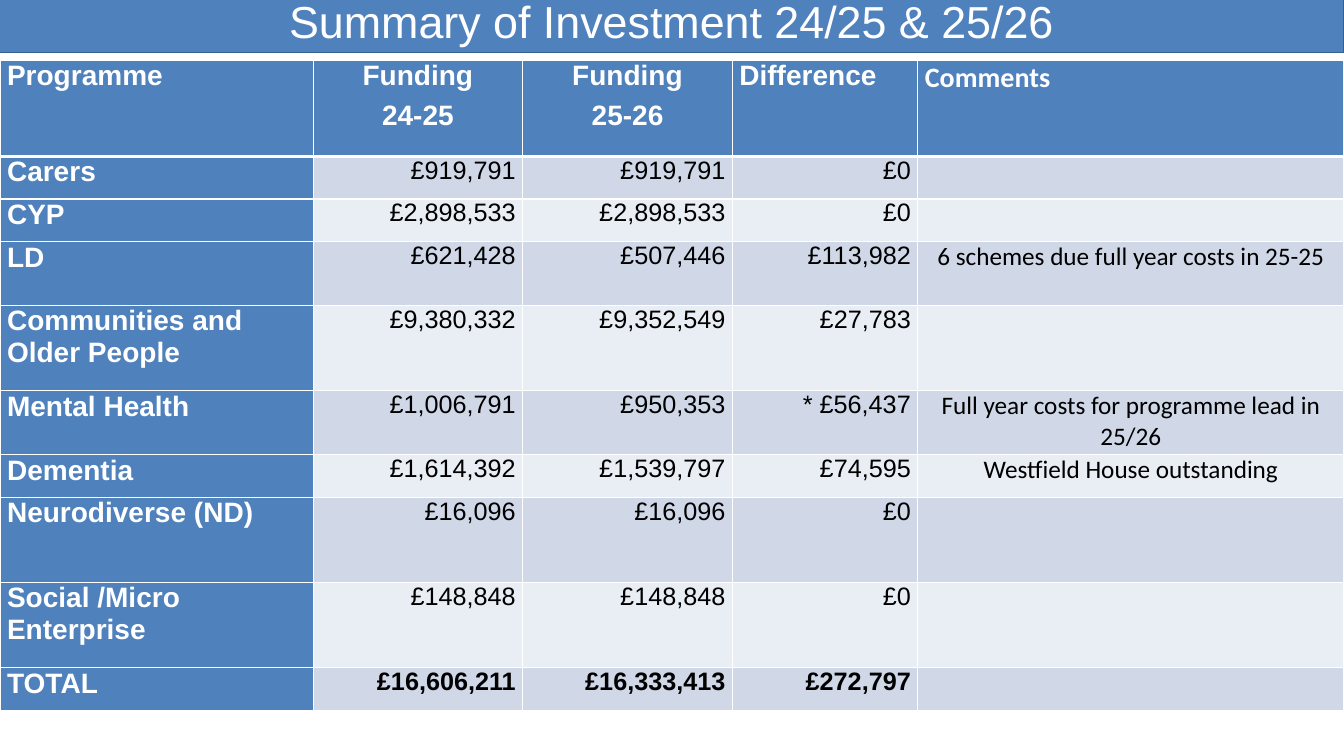
"""Build the summary slide of programme investment for 24/25 and 25/26."""
from dataclasses import dataclass

from lxml import etree
from pptx import Presentation
from pptx import util as u
from pptx.dml.color import RGBColor
from pptx.enum import shapes, text
from pptx.oxml.ns import qn

BLUE = RGBColor(0x4F, 0x81, 0xBD)
DARK_BLUE = RGBColor(0x37, 0x60, 0x92)
BAND_DARK = RGBColor(0xD0, 0xD8, 0xE8)
BAND_LIGHT = RGBColor(0xE9, 0xED, 0xF4)
WHITE = RGBColor(0xFF, 0xFF, 0xFF)
BLACK = RGBColor(0, 0, 0)

WIDTH, HEIGHT = u.Inches(13.33), u.Inches(7.5)
COLUMN_SHARES = (0.233, 0.156, 0.156, 0.138, 0.317)
ROW_UNIT = HEIGHT * 2.82 / 100
HEADER_UNITS = 4.5
TITLE_TOP, TITLE_HEIGHT, TABLE_TOP = -0.015, 0.085, 0.08
THIN, THICK = 1, 3

LEFT, CENTER, RIGHT = text.PP_ALIGN.LEFT, text.PP_ALIGN.CENTER, text.PP_ALIGN.RIGHT
HEADER_ALIGNMENTS = (LEFT, CENTER, CENTER, LEFT, LEFT)
BODY_ALIGNMENTS = (LEFT, RIGHT, RIGHT, RIGHT, CENTER)
COLUMN_FONTS = ("Arial", "Arial", "Arial", "Arial", "Calibri")
HEADINGS = ("Programme", "Funding\n24-25", "Funding\n25-26", "Difference", "Comments")


@dataclass(frozen=True)
class Programme:
    """Funding of one programme and its row height in grid units."""
    name: str
    funding_24: str
    funding_25: str
    difference: str
    comment: str = ""
    units: float = 2
    bold: bool = False

    def values(self) -> tuple[str, ...]:
        """Return the row's entries in column order."""
        return self.name, self.funding_24, self.funding_25, self.difference, self.comment


PROGRAMMES = (
    Programme("Carers", "£919,791", "£919,791", "£0"),
    Programme("CYP", "£2,898,533", "£2,898,533", "£0"),
    Programme("LD", "£621,428", "£507,446", "£113,982",
              "6 schemes due full year costs in 25-25", 3),
    Programme("Communities and Older People", "£9,380,332", "£9,352,549", "£27,783", units=4),
    Programme("Mental Health", "£1,006,791", "£950,353", "* £56,437",
              "Full year costs for programme lead in 25/26", 3),
    Programme("Dementia", "£1,614,392", "£1,539,797", "£74,595", "Westfield House outstanding"),
    Programme("Neurodiverse (ND)", "£16,096", "£16,096", "£0", units=4),
    Programme("Social /Micro Enterprise", "£148,848", "£148,848", "£0", units=4),
    Programme("TOTAL", "£16,606,211", "£16,333,413", "£272,797", bold=True),
)


def format_runs(paragraph, alignment, color: RGBColor, **font_values) -> None:
    """Align a paragraph and set the font of its runs."""
    paragraph.alignment = alignment
    for run in paragraph.runs:
        run.font.color.rgb = color
        for attribute, value in font_values.items():
            setattr(run.font, attribute, value)


def draw_borders(cell, top: float, bottom: float) -> None:
    """Give a cell white borders of the stated widths in points."""
    properties = cell._tc.get_or_add_tcPr()
    widths = {"a:lnL": THIN, "a:lnR": THIN, "a:lnT": top, "a:lnB": bottom}
    for position, (side, width) in enumerate(widths.items()):
        border = etree.Element(qn(side), w=str(u.Pt(width)))
        fill = etree.SubElement(border, qn("a:solidFill"))
        etree.SubElement(fill, qn("a:srgbClr"), val=str(WHITE))
        properties.insert(position, border)


def fill_cell(cell, content: str, fill: RGBColor, alignment, color: RGBColor,
              **font_values) -> None:
    """Write a cell's text and set its fill, insets and spacing."""
    margins = {"margin_left": 0.07, "margin_right": 0.07, "margin_top": 0, "margin_bottom": 0}
    for attribute, inches in margins.items():
        setattr(cell, attribute, u.Inches(inches))
    cell.fill.solid()
    cell.fill.fore_color.rgb = fill
    cell.text = content
    for index, paragraph in enumerate(cell.text_frame.paragraphs):
        paragraph.space_before = u.Pt(3 if index else 0)
        paragraph.space_after = u.Pt(3)
        format_runs(paragraph, alignment, color, **font_values)


def draw_title(slide, title: str) -> None:
    """Draw the title band across the top."""
    band = slide.shapes.add_shape(shapes.MSO_SHAPE.RECTANGLE, 0, round(HEIGHT * TITLE_TOP),
                                  WIDTH, round(HEIGHT * TITLE_HEIGHT))
    band.shadow.inherit = False
    band.fill.solid()
    band.fill.fore_color.rgb = BLUE
    band.line.color.rgb = DARK_BLUE
    band.line.width = u.Pt(0.75)
    frame = band.text_frame
    frame.text = title
    frame.word_wrap = True
    frame.auto_size = text.MSO_AUTO_SIZE.SHAPE_TO_FIT_TEXT
    frame.vertical_anchor = text.MSO_ANCHOR.MIDDLE
    format_runs(frame.paragraphs[0], CENTER, WHITE, name="Arial", size=u.Pt(32))


def draw_funding(slide, programmes: tuple[Programme, ...]) -> None:
    """Draw the funding table with its heading row."""
    units = [HEADER_UNITS, *(programme.units for programme in programmes)]
    funding = slide.shapes.add_table(len(units), len(HEADINGS), 0, round(HEIGHT * TABLE_TOP),
                                     WIDTH, round(ROW_UNIT * sum(units))).table
    for column, share in zip(funding.columns, COLUMN_SHARES):
        column.width = round(WIDTH * share)
    for row, row_units in zip(funding.rows, units):
        row.height = round(ROW_UNIT * row_units)

    for index, heading in enumerate(HEADINGS):
        cell = funding.cell(0, index)
        fill_cell(cell, heading, BLUE, HEADER_ALIGNMENTS[index], WHITE,
                  name=COLUMN_FONTS[index], size=u.Pt(20), bold=True)
        draw_borders(cell, THIN, THICK)

    for row_index, programme in enumerate(programmes, start=1):
        band = BAND_DARK if row_index % 2 else BAND_LIGHT
        for index, value in enumerate(programme.values()):
            is_name = index == 0
            cell = funding.cell(row_index, index)
            fill_cell(cell, value, BLUE if is_name else band, BODY_ALIGNMENTS[index],
                      WHITE if is_name else BLACK, name=COLUMN_FONTS[index],
                      size=u.Pt(20 if is_name else 18), bold=is_name or programme.bold)
            draw_borders(cell, THICK if row_index == 1 else THIN, THIN)


def main() -> None:
    """Build and save the slide."""
    presentation = Presentation()
    presentation.slide_width, presentation.slide_height = WIDTH, HEIGHT
    slide = presentation.slides.add_slide(presentation.slide_layouts[6])
    draw_title(slide, "Summary of Investment 24/25 & 25/26")
    draw_funding(slide, PROGRAMMES)
    presentation.save("out.pptx")


if __name__ == "__main__":
    main()
